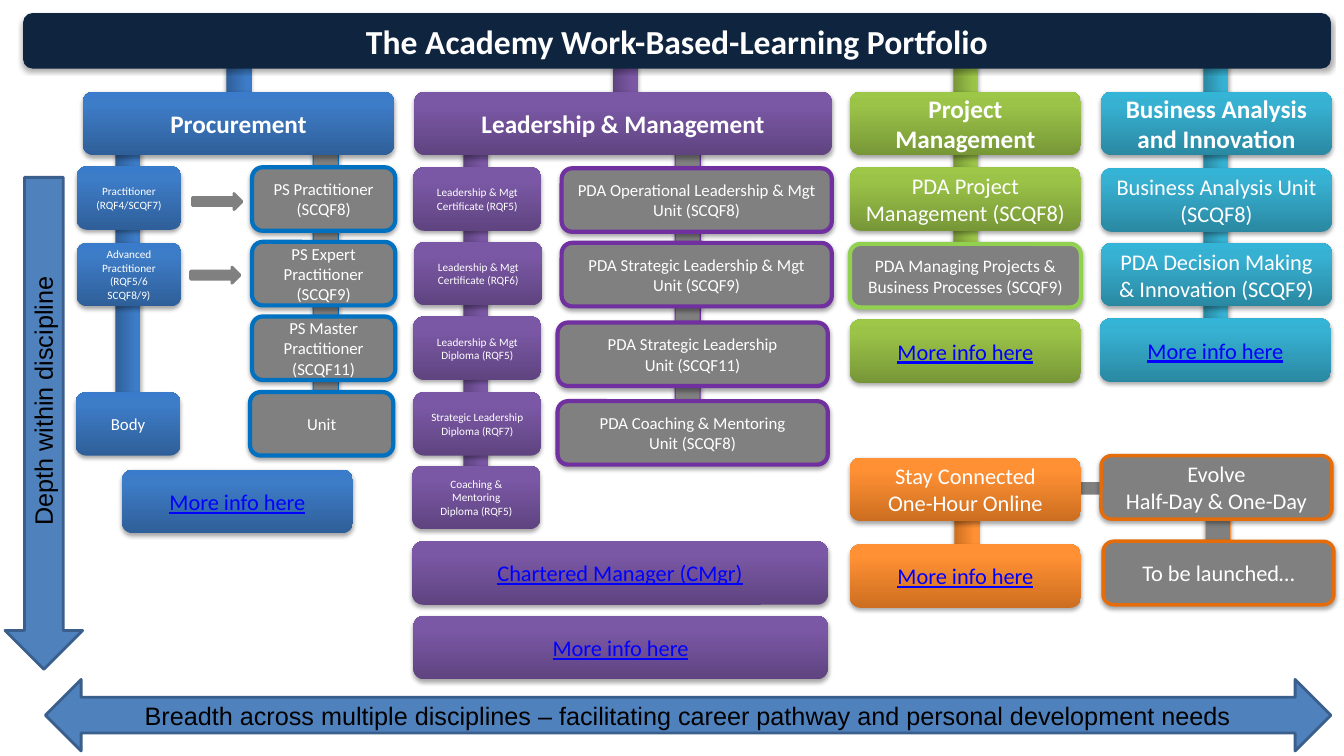
"""Builds the Academy work-based-learning portfolio slide."""
from copy import deepcopy

from lxml.etree import SubElement
from pptx import Presentation
from pptx.dml.color import RGBColor
from pptx.enum.shapes import MSO_SHAPE as SHAPE
from pptx.enum.text import MSO_ANCHOR as ANCHOR, PP_ALIGN as ALIGN
from pptx.oxml.ns import qn
from pptx.util import Inches, Pt

WHITE = RGBColor(0xFF, 0xFF, 0xFF)
BLACK = RGBColor(0x00, 0x00, 0x00)
LINK = RGBColor(0x00, 0x00, 0xFF)
NAVY = RGBColor(0x0F, 0x24, 0x3E)
GREY = RGBColor(0x80, 0x80, 0x80)
ARROW_BLUE = RGBColor(0x4F, 0x81, 0xBD)
ARROW_EDGE = RGBColor(0x3A, 0x5F, 0x8C)
BLUE_EDGE = RGBColor(0x00, 0x70, 0xC0)
PURPLE_EDGE = RGBColor(0x70, 0x30, 0xA0)
GREEN_EDGE = RGBColor(0x92, 0xD0, 0x50)
ORANGE_EDGE = RGBColor(0xE4, 0x6C, 0x0A)
PALE_ORANGE = RGBColor(0xF7, 0x96, 0x46)
BLUE = [RGBColor(0x2F, 0x5F, 0x99), RGBColor(0x3D, 0x7C, 0xC7), RGBColor(0x3A, 0x7C, 0xCB)]
PURPLE = [RGBColor(0x5F, 0x44, 0x80), RGBColor(0x7B, 0x58, 0xA6), RGBColor(0x7C, 0x57, 0xA8)]
GREEN = [RGBColor(0x77, 0x97, 0x37), RGBColor(0x9B, 0xC3, 0x48), RGBColor(0x9D, 0xC7, 0x46)]
TEAL = [RGBColor(0x2A, 0x88, 0xA2), RGBColor(0x37, 0xB1, 0xD2), RGBColor(0x34, 0xB4, 0xD6)]
ORANGE = [RGBColor(0xCC, 0x6E, 0x20), RGBColor(0xFF, 0x90, 0x34), RGBColor(0xFF, 0x91, 0x36)]
CARD_HEIGHT = 0.63

prs = Presentation()
prs.slide_width, prs.slide_height = Inches(13.33), Inches(7.5)
slide = prs.slides.add_slide(prs.slide_layouts[6])


def add_block(kind, left, top, width, height, fill, edge=None, edge_width=0):
    """Draw a shape; a list of colours makes a gradient, rounded blocks get a shadow."""
    block = slide.shapes.add_shape(kind, Inches(left), Inches(top), Inches(width), Inches(height))
    block.shadow.inherit = False
    if isinstance(fill, list):
        block.fill.gradient()
        block.fill.gradient_angle = 90
        stop_list = block.fill._fill._gradFill.find(qn("a:gsLst"))
        stop_list.append(deepcopy(stop_list[-1]))
        for stop, position, colour in zip(block.fill.gradient_stops, (0, 0.8, 1), fill):
            stop.position = position
            stop.color.rgb = colour
    else:
        block.fill.solid()
        block.fill.fore_color.rgb = fill
    if edge is None:
        block.line.fill.background()
    else:
        block.line.color.rgb = edge
        block.line.width = Pt(edge_width)
    if kind == SHAPE.ROUNDED_RECTANGLE:
        effects = block._element.spPr.find(qn("a:effectLst"))
        shadow = SubElement(effects, qn("a:outerShdw"), blurRad="40000", dist="23000",
                            dir="5400000", rotWithShape="0")
        shade = SubElement(shadow, qn("a:srgbClr"), val="000000")
        SubElement(shade, qn("a:alpha"), val="35000")
    return block


def write(shape, text, size, colour=WHITE, font="Calibri", bold=False, anchor=ANCHOR.MIDDLE):
    """Centre the text in the shape, one paragraph per line; links are underlined."""
    frame = shape.text_frame
    frame.word_wrap = True
    frame.vertical_anchor = anchor
    for index, line in enumerate(text.split("\n")):
        paragraph = frame.add_paragraph() if index else frame.paragraphs[0]
        paragraph.alignment = ALIGN.CENTER
        run = paragraph.add_run()
        run.text = line
        run.font.name = font
        run.font.size = Pt(size)
        run.font.bold = bold
        run.font.underline = colour == LINK
        run.font.color.rgb = colour


rails = [
    (6.2, 0.45, 0.97, PURPLE, None),
    (9.58, 0.32, 2.25, GREEN, None),
    (12.06, 0.36, 2.99, TEAL, None),
    (2.37, 0.44, 0.63, BLUE, None),
    (9.59, 4.79, 1.06, ORANGE, None),
    (1.27, 1.21, 2.91, BLUE, None),
    (3.23, 1.2, 2.91, GREY, BLUE_EDGE),
    (4.72, 1.26, 3.4, PURPLE, None),
    (6.82, 1.12, 2.99, GREY, PURPLE_EDGE),
    (12.08, 4.69, 1.06, GREY, PALE_ORANGE),
]
for centre, top, length, fill, edge in rails:
    rail = add_block(SHAPE.ROUNDED_RECTANGLE, centre - length / 2, top + length / 2 - 0.125,
                     length, 0.25, fill, edge, 0.75)
    rail.rotation = 90

for left, top, width, height in [(1.91, 1.92, 0.49, 0.16), (1.89, 2.65, 0.49, 0.16),
                                 (9.99, 4.75, 1.67, 0.19)]:
    add_block(SHAPE.RIGHT_ARROW, left, top, width, height, GREY, GREY, 2)

title = add_block(SHAPE.ROUNDED_RECTANGLE, 0.23, 0.13, 12.97, 0.55, NAVY)
write(title, "The Academy Work-Based-Learning Portfolio", 24, bold=True)

disciplines = [
    (0.82, 3.09, BLUE, "Procurement"),
    (4.11, 4.14, PURPLE, "Leadership & Management"),
    (8.43, 2.29, GREEN, "Project Management"),
    (10.92, 2.29, TEAL, "Business Analysis and Innovation"),
]
for left, width, fill, name in disciplines:
    header = add_block(SHAPE.ROUNDED_RECTANGLE, left, 0.91, width, CARD_HEIGHT, fill)
    write(header, name, 18, bold=True)

course_groups = [
    (1.04, BLUE, None, 0, 8, [
        (0.76, 1.65, "Practitioner\n(RQF4/SCQF7)"),
        (0.76, 2.41, "Advanced Practitioner\n(RQF5/6 SCQF8/9)")]),
    (1.04, BLUE, None, 0, 12, [(0.75, 3.89, "Body")]),
    (1.42, GREY, BLUE_EDGE, 3, 12, [
        (2.5, 1.66, "PS Practitioner\n(SCQF8)"),
        (2.5, 2.4, "PS Expert Practitioner (SCQF9)"),
        (2.5, 3.14, "PS Master Practitioner (SCQF11)"),
        (2.48, 3.89, "Unit")]),
    (1.27, PURPLE, None, 0, 8, [
        (4.1, 1.66, "Leadership & Mgt Certificate (RQF5)"),
        (4.11, 2.4, "Leadership & Mgt Certificate (RQF6)"),
        (4.1, 3.14, "Leadership & Mgt Diploma (RQF5)"),
        (4.1, 3.89, "Strategic Leadership Diploma (RQF7)"),
        (4.09, 4.62, "Coaching & Mentoring\nDiploma (RQF5)")]),
    (2.68, GREY, PURPLE_EDGE, 3, 12, [
        (5.57, 1.67, "PDA Operational Leadership & Mgt\nUnit (SCQF8)"),
        (5.57, 2.41, "PDA Strategic Leadership & Mgt\nUnit (SCQF9)"),
        (5.53, 3.2, "PDA Strategic Leadership\nUnit (SCQF11)"),
        (5.53, 3.98, "PDA Coaching & Mentoring\nUnit (SCQF8)")]),
    (2.29, GREEN, None, 0, 16, [(8.43, 1.66, "PDA Project Management (SCQF8)")]),
    (2.29, GREY, GREEN_EDGE, 3, 12.5, [
        (8.43, 2.42, "PDA Managing Projects & Business Processes (SCQF9)")]),
    (2.29, TEAL, None, 0, 16, [
        (10.92, 1.67, "Business Analysis Unit (SCQF8)"),
        (10.92, 2.41, "PDA Decision Making & Innovation (SCQF9)")]),
    (2.29, ORANGE, None, 0, 16, [(8.43, 4.54, "Stay Connected\nOne-Hour Online")]),
    (2.29, GREY, ORANGE_EDGE, 2.5, 16, [
        (10.92, 4.52, "Evolve\nHalf-Day & One-Day"),
        (10.94, 5.37, "To be launched…")]),
]
for width, fill, edge, edge_width, size, courses in course_groups:
    for left, top, name in courses:
        course = add_block(SHAPE.ROUNDED_RECTANGLE, left, top, width, CARD_HEIGHT,
                           fill, edge, edge_width)
        write(course, name, size)

more_info = "More info here"
links = [
    (1.21, 4.66, 2.29, BLUE, more_info),
    (4.09, 5.37, 4.12, PURPLE, "Chartered Manager (CMgr)"),
    (4.1, 6.11, 4.11, PURPLE, more_info),
    (8.43, 3.17, 2.29, GREEN, more_info),
    (10.91, 3.16, 2.29, TEAL, more_info),
    (8.43, 5.4, 2.29, ORANGE, more_info),
]
for left, top, width, fill, label in links:
    link = add_block(SHAPE.ROUNDED_RECTANGLE, left, top, width, CARD_HEIGHT, fill)
    write(link, label, 16, LINK)

add_block(SHAPE.DOWN_ARROW, 0.05, 1.76, 0.77, 4.88, ARROW_BLUE, ARROW_EDGE, 2)
add_block(SHAPE.LEFT_RIGHT_ARROW, 0.45, 6.74, 12.75, 0.71, ARROW_BLUE, ARROW_EDGE, 2)
axes = [
    (-1.7, 3.78, 4.25, 270, "Depth within discipline"),
    (0.75, 6.9, 12.14, 0, "Breadth across multiple disciplines – facilitating career pathway "
                          "and personal development needs"),
]
for left, top, width, rotation, label in axes:
    axis = slide.shapes.add_textbox(Inches(left), Inches(top), Inches(width), Inches(0.4))
    axis.rotation = rotation
    write(axis, label, 18, BLACK, "Arial", anchor=ANCHOR.TOP)

prs.save("out.pptx")
